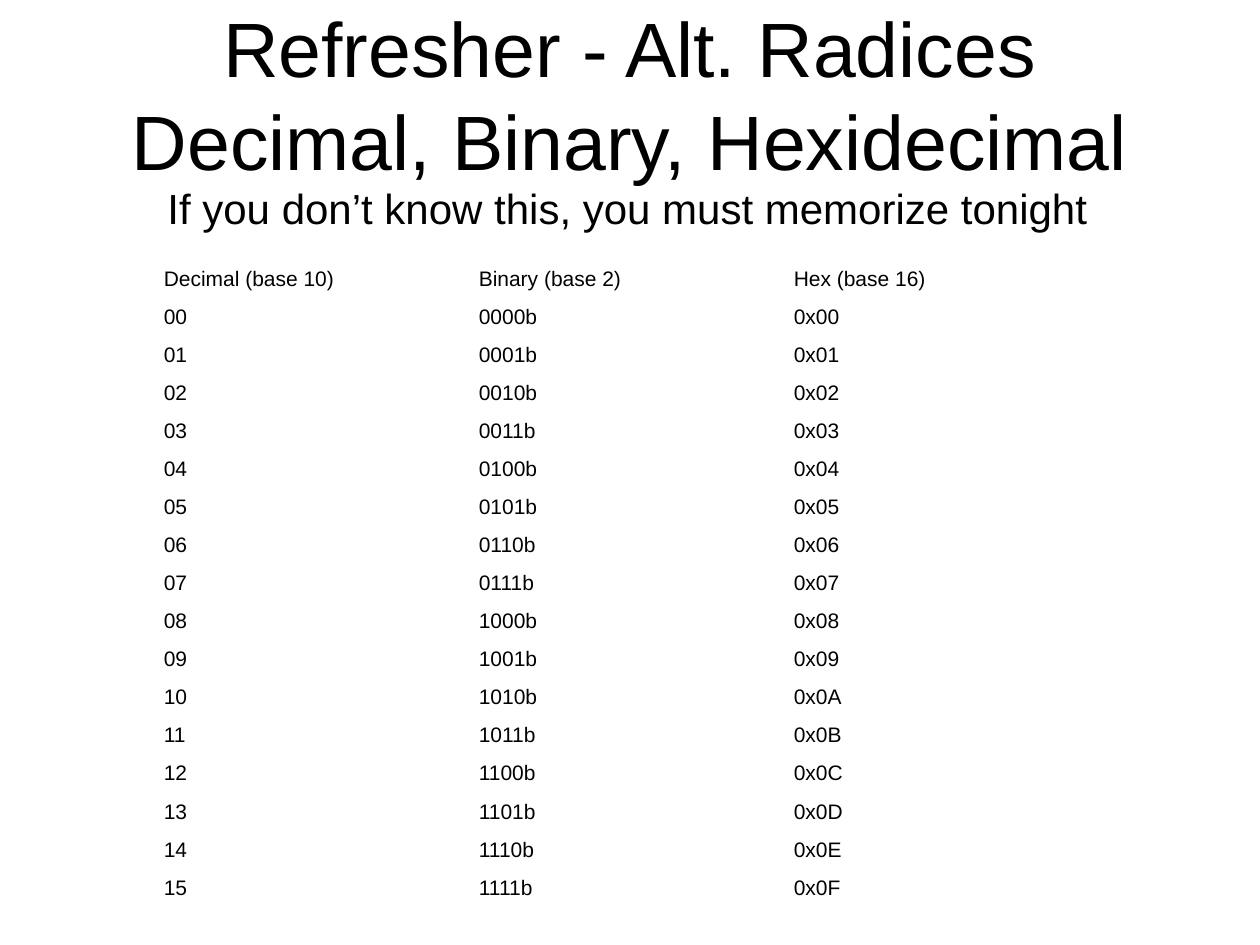
from dataclasses import dataclass
from typing import Any

from pptx import Presentation
from pptx.dml.color import RGBColor
from pptx.enum.text import MSO_ANCHOR, MSO_AUTO_SIZE, PP_ALIGN
from pptx.util import Pt

MIDDLE = MSO_ANCHOR.MIDDLE
GROW = MSO_AUTO_SIZE.SHAPE_TO_FIT_TEXT
LEFT, CENTER = PP_ALIGN.LEFT, PP_ALIGN.CENTER
COLORS = {"ink": "000000", "page": "FFFFFF"}
FONT = "Arial"
INSET = 3.6
ROW_STEP = 21.75
COL_WIDTH = 180


@dataclass(frozen=True)
class Label:
    text: str
    left: float
    top: float
    width: float
    height: float
    size: float
    inset: float = 0
    wrap: bool = True
    line: Any = None


@dataclass(frozen=True)
class Row:
    decimal: str
    binary: str
    hexa: str


LABELS = [
    Label("Refresher - Alt. Radices Decimal, Binary, Hexidecimal",
          54, 0, 612, 106, 44, line=Pt(53)),
    Label("If you don’t know this, you must memorize tonight",
          91.5, 101.5, 534, 34.5, 24, inset=INSET, wrap=False),
]
ROWS = [Row("Decimal (base 10)", "Binary (base 2)", "Hex (base 16)")]
ROWS += [Row(f"{n:02d}", f"{n:04b}b", f"0x{n:02X}") for n in range(16)]


def write(frame: Any, text: str, *, size: float, align: Any = LEFT,
          line: Any = None, before: float = 0) -> None:
    """Put one formatted paragraph into a text frame."""
    para = frame.paragraphs[0]
    para.alignment = align
    para.space_before = Pt(before)
    if line is not None:
        para.line_spacing = line
    run = para.add_run()
    run.text = text
    run.font.name = FONT
    run.font.size = Pt(size)
    run.font.color.rgb = RGBColor.from_string(COLORS["ink"])


def pad(target: Any, inset: float) -> None:
    """Set the same margin on all four sides."""
    target.margin_left = target.margin_right = Pt(inset)
    target.margin_top = target.margin_bottom = Pt(inset)


def draw_label(slide: Any, label: Label) -> None:
    """Draw a centred text box."""
    box = slide.shapes.add_textbox(
        Pt(label.left), Pt(label.top), Pt(label.width), Pt(label.height))
    frame = box.text_frame
    frame.word_wrap = label.wrap
    frame.auto_size = GROW
    frame.vertical_anchor = MIDDLE
    pad(frame, label.inset)
    write(frame, label.text, size=label.size, align=CENTER, line=label.line)


def draw_table(slide: Any, rows: list[Row], left: float, top: float) -> None:
    """Draw the plain table of number forms."""
    table = slide.shapes.add_table(
        len(rows), 3, Pt(left), Pt(top),
        Pt(3 * COL_WIDTH), Pt(len(rows) * ROW_STEP)).table
    table.first_row = table.horz_banding = False
    for col in table.columns:
        col.width = Pt(COL_WIDTH)
    for line, row in zip(table.rows, rows):
        line.height = Pt(ROW_STEP)
        for cell, text in zip(line.cells, (row.decimal, row.binary, row.hexa)):
            cell.fill.background()
            pad(cell, INSET)
            write(cell.text_frame, text, size=12, line=0.93, before=3)


def main() -> None:
    """Build and save the slide."""
    deck = Presentation()
    deck.slide_width, deck.slide_height = Pt(720), Pt(540)
    slide = deck.slides.add_slide(deck.slide_layouts[6])
    fill = slide.background.fill
    fill.solid()
    fill.fore_color.rgb = RGBColor.from_string(COLORS["page"])
    title, note = LABELS
    draw_label(slide, title)
    draw_table(slide, ROWS, 90, 150)
    draw_label(slide, note)
    deck.save("out.pptx")


if __name__ == "__main__":
    main()
